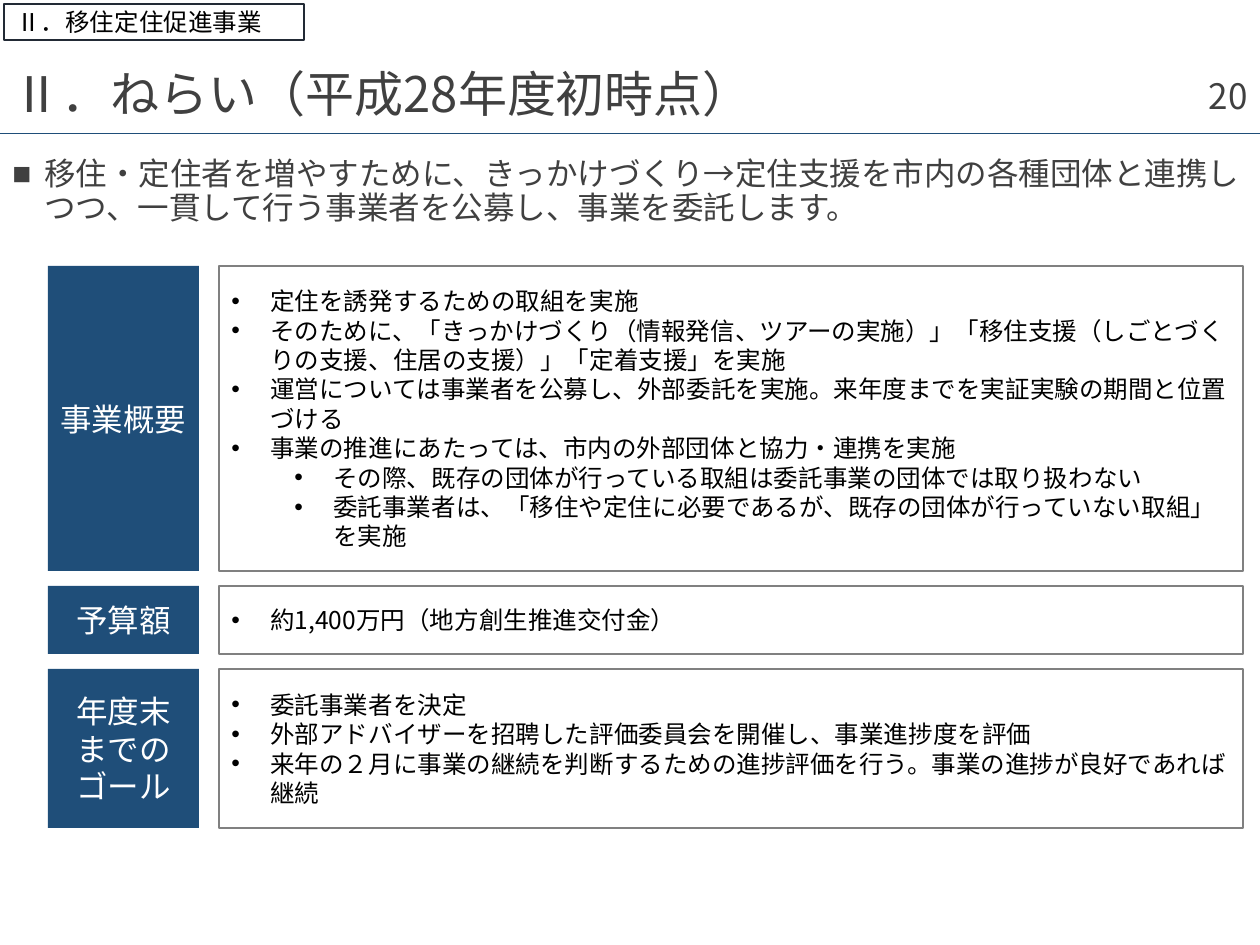
from dataclasses import dataclass

from lxml.etree import SubElement
from pptx import Presentation
from pptx.dml.color import RGBColor
from pptx.enum.shapes import MSO_CONNECTOR as Connector, MSO_SHAPE as Shape
from pptx.enum.text import MSO_ANCHOR as Anchor, PP_ALIGN as Align
from pptx.oxml.ns import qn
from pptx.util import Emu, Pt

SECTION = "Ⅱ．移住定住促進事業"
TITLE = "Ⅱ．ねらい（平成28年度初時点）"
PAGE = "20"
LEAD = ("移住・定住者を増やすために、きっかけづくり→定住支援を市内の各種団体と連携し"
        "つつ、一貫して行う事業者を公募し、事業を委託します。")
ROWS = [
    (305, ["事業概要"], [
        (0, "定住を誘発するための取組を実施"),
        (0, "そのために、「きっかけづくり（情報発信、ツアーの実施）」"
            "「移住支援（しごとづくりの支援、住居の支援）」「定着支援」を実施"),
        (0, "運営については事業者を公募し、外部委託を実施。"
            "来年度までを実証実験の期間と位置づける"),
        (0, "事業の推進にあたっては、市内の外部団体と協力・連携を実施"),
        (1, "その際、既存の団体が行っている取組は委託事業の団体では取り扱わない"),
        (1, "委託事業者は、「移住や定住に必要であるが、"
            "既存の団体が行っていない取組」を実施"),
    ]),
    (68, ["予算額"], [(0, "約1,400万円（地方創生推進交付金）")]),
    (159, ["年度末", "までの", "ゴール"], [
        (0, "委託事業者を決定"),
        (0, "外部アドバイザーを招聘した評価委員会を開催し、事業進捗度を評価"),
        (0, "来年の２月に事業の継続を判断するための進捗評価を行う。"
            "事業の進捗が良好であれば継続"),
    ]),
]


@dataclass(frozen=True)
class Theme:
    font: str = "Noto Sans CJK JP"
    navy: str = "1F4E79"
    frame: str = "222A35"
    gray: str = "808080"
    ink: str = "404040"
    black: str = "000000"
    white: str = "FFFFFF"
    title: int = 28
    page: int = 20
    heading: int = 18
    body: int = 14


THEME = Theme()
WIDTH, HEIGHT = 1260, 945
ROWS_TOP, ROW_GAP = 266, 15
LABEL_LEFT, LABEL_WIDTH = 48, 151
DETAIL_LEFT, DETAIL_WIDTH = 219, 1024
LEVEL_STEP, HANGING, LEAD_HANGING = 63, 39, 32


def px(value):
    return Emu(round(value * 914400 / 126))


def color(value):
    return RGBColor.from_string(value)


def add_bullet(paragraph, character, left, hanging):
    properties = paragraph._p.get_or_add_pPr()
    properties.set("marL", str(px(left)))
    properties.set("indent", str(-px(hanging)))
    SubElement(properties, qn("a:buFont"), typeface="Arial")
    SubElement(properties, qn("a:buChar"), char=character)


def write(shape, lines, size, ink, align=Align.LEFT, anchor=Anchor.MIDDLE):
    frame = shape.text_frame
    frame.word_wrap = True
    frame.vertical_anchor = anchor
    frame.text = "\n".join(lines)
    for paragraph in frame.paragraphs:
        paragraph.alignment = align
        for run in paragraph.runs:
            run.font.size = Pt(size)
            run.font.name = THEME.font
            run.font.color.rgb = color(ink)
            SubElement(run._r.get_or_add_rPr(), qn("a:ea"), typeface=THEME.font)
    return frame.paragraphs


def add_text(slide, box, text, size, **layout):
    shape = slide.shapes.add_textbox(*map(px, box))
    return write(shape, [text], size, THEME.ink, **layout)[0]


def add_box(slide, box, fill, line=None):
    shape = slide.shapes.add_shape(Shape.RECTANGLE, *map(px, box))
    shape.shadow.inherit = False
    shape.fill.solid()
    shape.fill.fore_color.rgb = color(fill)
    if line:
        shape.line.color.rgb = color(line)
        shape.line.width = Pt(1)
    else:
        shape.line.fill.background()
    return shape


def add_header(slide):
    rule = slide.shapes.add_connector(
        Connector.STRAIGHT, px(0), px(133), px(WIDTH), px(133))
    rule.line.color.rgb = color(THEME.navy)
    rule.line.width = Pt(0.5)
    SubElement(rule._element.spPr, qn("a:effectLst"))

    title = add_text(slide, (0, 78, WIDTH, 37), TITLE, THEME.title)
    title.line_spacing = 0.9
    lead = add_text(slide, (0, 152, WIDTH, 239), LEAD, THEME.heading,
                    anchor=Anchor.TOP)
    lead.line_spacing = 0.9
    lead.space_before = Pt(10)
    add_bullet(lead, "■", LEAD_HANGING, LEAD_HANGING)
    add_text(slide, (976, 71, 284, 50), PAGE, THEME.page, align=Align.RIGHT)

    section = add_box(slide, (4, 4, 300, 36), THEME.white, THEME.frame)
    write(section, [SECTION], THEME.body, THEME.black)


def add_rows(slide):
    top = ROWS_TOP
    for height, label_lines, items in ROWS:
        label = add_box(slide, (LABEL_LEFT, top, LABEL_WIDTH, height), THEME.navy)
        write(label, label_lines, THEME.heading, THEME.white, Align.CENTER)
        detail = add_box(slide, (DETAIL_LEFT, top, DETAIL_WIDTH, height),
                         THEME.white, THEME.gray)
        paragraphs = write(detail, [text for _, text in items],
                           THEME.body, THEME.black)
        for paragraph, (level, _) in zip(paragraphs, items):
            paragraph.level = level
            add_bullet(paragraph, "•", HANGING + level * LEVEL_STEP, HANGING)
        top += height + ROW_GAP


def main():
    presentation = Presentation()
    presentation.slide_width, presentation.slide_height = px(WIDTH), px(HEIGHT)
    slide = presentation.slides.add_slide(presentation.slide_layouts[6])
    add_header(slide)
    add_rows(slide)
    presentation.save("out.pptx")


if __name__ == "__main__":
    main()
